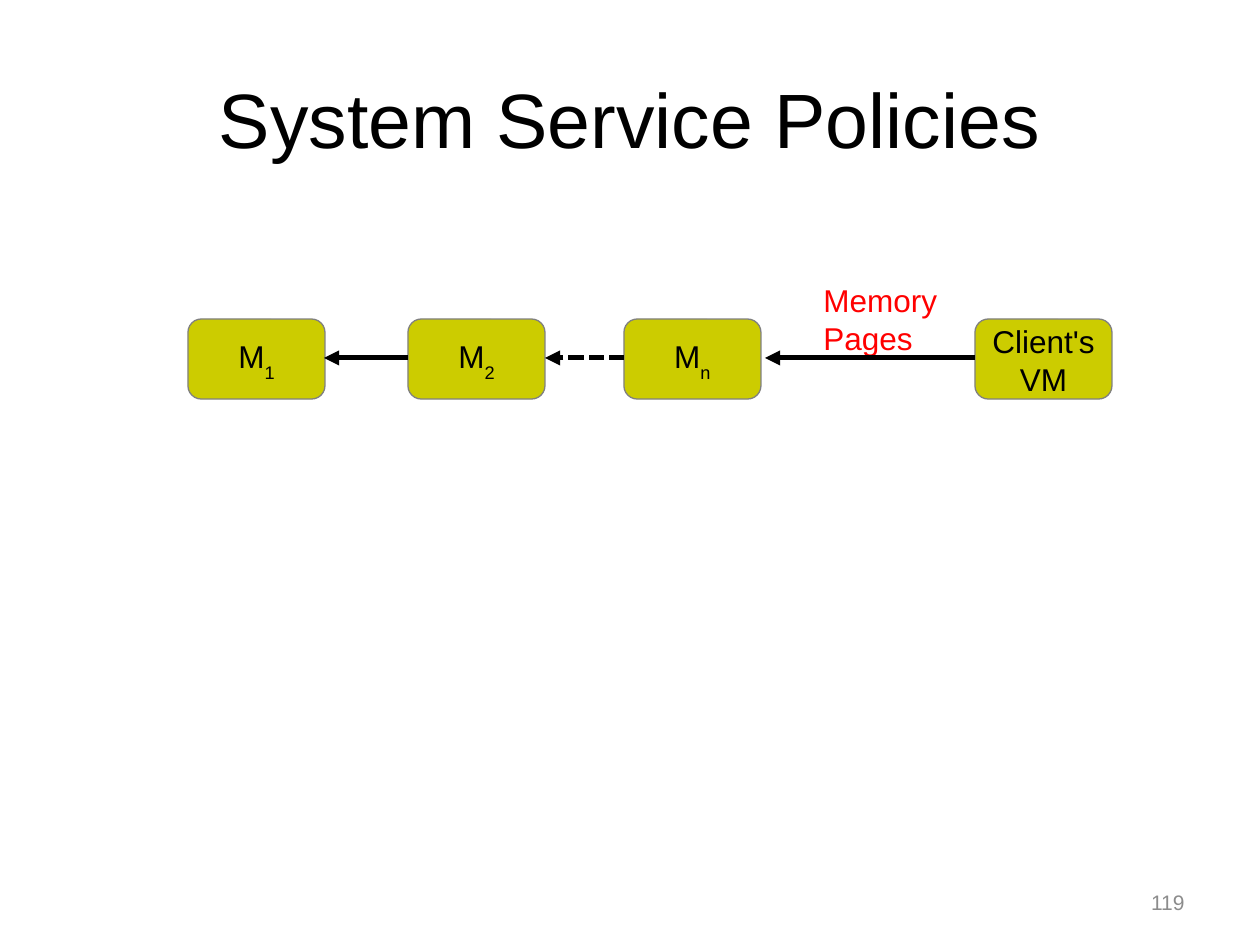
import pptx
import pptx.dml.color
import pptx.enum.dml
import pptx.enum.shapes
import pptx.enum.text
import pptx.oxml.ns
import pptx.util
from lxml import etree

EMU_PER_PX = 914400 / 126
ALIGN = pptx.enum.text.PP_ALIGN
ANCHOR = pptx.enum.text.MSO_ANCHOR
qn = pptx.oxml.ns.qn


def px(length):
    return pptx.util.Emu(round(length * EMU_PER_PX))


def color(hex_code):
    return pptx.dml.color.RGBColor.from_string(hex_code)


prs = pptx.Presentation()
prs.slide_width, prs.slide_height = px(1260), px(945)
slide = prs.slides.add_slide(prs.slide_layouts[6])

# Title, arrow label and page number
labels = [
    ("System Service Policies", (63, 38, 1134, 158), 44, "000000", ALIGN.CENTER, ANCHOR.MIDDLE),
    ("Memory\nPages", (811, 274, 149, 76), 18, "FF0000", ALIGN.LEFT, ANCHOR.TOP),
    ("119", (903, 876, 294, 50), 12, "8C8C8C", ALIGN.RIGHT, ANCHOR.MIDDLE),
]
for wording, place, size, ink, align, anchor in labels:
    label = slide.shapes.add_textbox(*map(px, place)).text_frame
    label.text = wording
    label.word_wrap = True
    label.vertical_anchor = anchor
    label.margin_top, label.margin_bottom = px(7), px(5)
    for paragraph in label.paragraphs:
        paragraph.alignment = align
        paragraph.font.name = "Arial"
        paragraph.font.size = pptx.util.Pt(size)
        paragraph.font.color.rgb = color(ink)

# Machines: left edge, name, subscript
machines = [(188, "M", "1"), (408, "M", "2"), (624, "M", "n"), (975, "Client's\nVM", "")]
for left, name, subscript in machines:
    machine = slide.shapes.add_shape(
        pptx.enum.shapes.MSO_SHAPE.ROUNDED_RECTANGLE, px(left), px(319), px(137), px(80))
    machine.shadow.inherit = False
    machine.fill.solid()
    machine.fill.fore_color.rgb = color("CCCC00")
    machine.line.color.rgb = color("808080")
    machine.line.width = pptx.util.Pt(0.75)
    frame = machine.text_frame
    frame.text = name
    frame.word_wrap = False
    frame.vertical_anchor = ANCHOR.MIDDLE
    frame.margin_top, frame.margin_bottom = px(7), px(5)
    if subscript:
        index = frame.paragraphs[0].add_run()
        index.text = subscript
        index.font._element.set("baseline", "-33000")
    for paragraph in frame.paragraphs:
        paragraph.alignment = ALIGN.CENTER
        paragraph.font.name = "Arial"
        paragraph.font.size = pptx.util.Pt(18)
        paragraph.font.color.rgb = color("000000")

# Arrows from right to left: start, end, dotted
for start, end, dotted in [(408, 324, False), (624, 545, True), (975, 765, False)]:
    arrow = slide.shapes.add_connector(
        pptx.enum.shapes.MSO_CONNECTOR.STRAIGHT, px(start), px(358), px(end), px(358))
    arrow.line.color.rgb = color("000000")
    arrow.line.width = pptx.util.Pt(2.89)
    if dotted:
        arrow.line.dash_style = pptx.enum.dml.MSO_LINE.ROUND_DOT
        arrow.line.dash_style = pptx.enum.dml.MSO_LINE.SQUARE_DOT
    etree.SubElement(arrow.line._get_or_add_ln(), qn("a:tailEnd"), type="triangle")
    etree.SubElement(arrow._element.spPr, qn("a:effectLst"))

prs.save("out.pptx")
